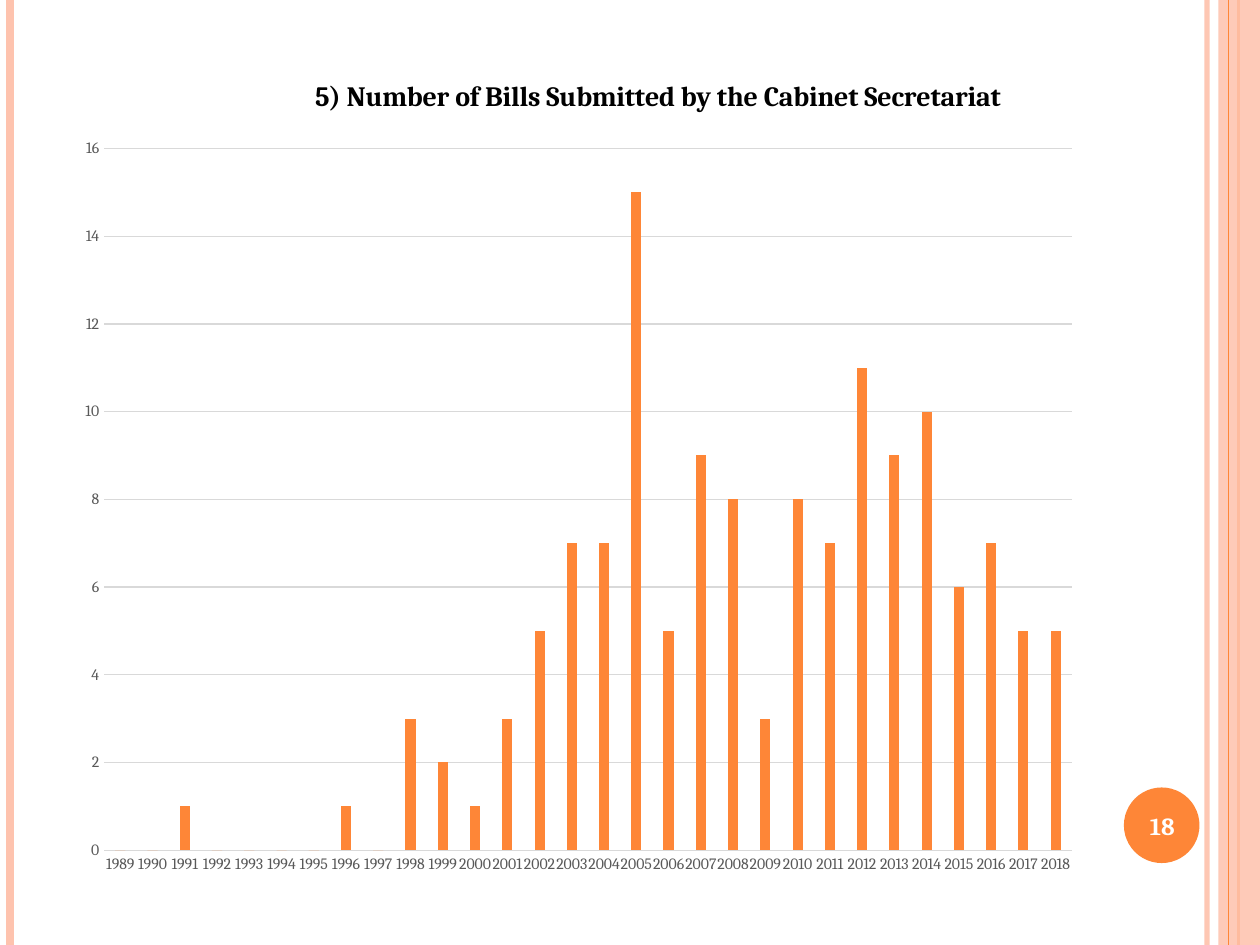
from dataclasses import dataclass

from lxml import etree
from pptx import Presentation
from pptx import util as u
from pptx.chart.data import CategoryChartData
from pptx.dml.color import RGBColor
from pptx.enum import chart as ch, shapes, text
from pptx.oxml import parse_xml
from pptx.oxml.ns import qn

W, H = 10, 7.5
FIRST_YEAR = 1989
BILLS = [0, 0, 1, 0, 0, 0, 0, 1, 0, 3, 2, 1, 3, 5, 7,
         7, 15, 5, 9, 8, 3, 8, 7, 11, 9, 10, 6, 7, 5, 5]


@dataclass(frozen=True)
class Theme:
    font: str = "Cambria"
    orange: str = "FE8637"
    peach: str = "FEC3AE"
    grid: str = "D9D9D9"
    label: str = "595959"
    black: str = "000000"
    white: str = "FFFFFF"
    title: int = 16
    number: int = 14
    body: int = 10
    axis: int = 9


T = Theme()


def rgb(color):
    return RGBColor.from_string(color)


def set_font(font, size, color, bold=False):
    font.name, font.size, font.bold = T.font, u.Pt(size), bold
    font.color.rgb = rgb(color)


def set_alpha(element, percent):
    color = next(element.iter(qn("a:srgbClr")))
    etree.SubElement(color, qn("a:alpha")).set("val", str(percent * 1000))


def add_stripe(s, x, color, width, alpha=100):
    c = s.shapes.add_connector(shapes.MSO_CONNECTOR.STRAIGHT,
                               u.Inches(x), 0, u.Inches(x), u.Inches(H))
    c.line.color.rgb = rgb(color)
    c.line.width = u.Pt(width)
    pr = c._element.spPr
    etree.SubElement(pr, qn("a:effectLst"))
    if alpha < 100:
        set_alpha(pr, alpha)


def add_block(s, kind, box, color, alpha=100):
    sp = s.shapes.add_shape(kind, *map(u.Inches, box))
    sp.shadow.inherit = False
    sp.fill.solid()
    sp.fill.fore_color.rgb = rgb(color)
    sp.line.fill.background()
    if alpha < 100:
        set_alpha(sp._element.spPr, alpha)


def add_number(s, value, box):
    tf = s.shapes.add_textbox(*map(u.Inches, box)).text_frame
    tf.word_wrap = True
    tf.vertical_anchor = text.MSO_ANCHOR.MIDDLE
    p = tf.paragraphs[0]
    p.text = value
    p.alignment = text.PP_ALIGN.CENTER
    set_font(p.runs[0].font, T.number, T.white, True)


def place(element, index, target=None, **shares):
    for old in element.findall(qn("c:layout")):
        element.remove(old)
    layout = parse_xml('<c:layout xmlns:c="http://schemas.openxmlformats.org/'
                       'drawingml/2006/chart"><c:manualLayout/></c:layout>')
    values = {"layoutTarget": target} if target else {}
    values.update(xMode="edge", yMode="edge", **shares)
    for tag, value in values.items():
        etree.SubElement(layout[0], qn(f"c:{tag}")).set("val", str(value))
    element.insert(index, layout)


def style_axis(axis):
    axis.major_tick_mark = axis.minor_tick_mark = ch.XL_TICK_MARK.NONE
    set_font(axis.tick_labels.font, T.axis, T.label)


def set_hairline(line):
    line.color.rgb = rgb(T.grid)
    line.width = u.Pt(0.75)


def add_column_chart(s, title, box):
    data = CategoryChartData()
    data.categories = [str(FIRST_YEAR + i) for i in range(len(BILLS))]
    data.add_series("Series 1", BILLS)
    chart = s.shapes.add_chart(ch.XL_CHART_TYPE.COLUMN_CLUSTERED,
                               *map(u.Inches, box), data).chart
    set_font(chart.font, T.body, T.black)
    chart.has_legend = False
    chart.has_title = True
    p = chart.chart_title.text_frame.paragraphs[0]
    p.text = title
    set_font(p.runs[0].font, T.title, T.black, True)
    place(chart.chart_title._element, 1, x=0.24, y=0.02)
    place(chart._chartSpace.chart.plotArea, 0, "inner",
          x=0.04, y=0.11, w=0.94, h=0.84)

    plot = chart.plots[0]
    plot.gap_width, plot.overlap = 219, -27
    plot.vary_by_categories = False
    fill = plot.series[0].format.fill
    fill.solid()
    fill.fore_color.rgb = rgb(T.orange)

    cat, val = chart.category_axis, chart.value_axis
    style_axis(cat)
    style_axis(val)
    set_hairline(cat.format.line)
    set_hairline(val.major_gridlines.format.line)
    val.format.line.fill.background()
    val.minimum_scale, val.maximum_scale, val.major_unit = 0, 16, 2


def main():
    prs = Presentation()
    prs.slide_width, prs.slide_height = u.Inches(W), u.Inches(H)
    s = prs.slides.add_slide(prs.slide_layouts[6])
    kind = shapes.MSO_SHAPE
    add_stripe(s, 9.58, T.peach, 3, 93)
    add_stripe(s, 0.08, T.peach, 4.5)
    add_stripe(s, 9.83, T.orange, 1.5)
    add_block(s, kind.RECTANGLE, (W - 0.33, 0, 0.33, H), T.peach, 87)
    add_stripe(s, 9.75, T.orange, 0.75)
    add_block(s, kind.OVAL, (8.92, 6.25, 0.6, 0.6), T.orange)
    add_number(s, "18", (8.89, 6.27, 0.67, 0.57))
    add_column_chart(s, "5) Number of Bills Submitted by the Cabinet Secretariat",
                     (0.5, 0.45, 8.17, 6.63))
    prs.save("out.pptx")


if __name__ == "__main__":
    main()
